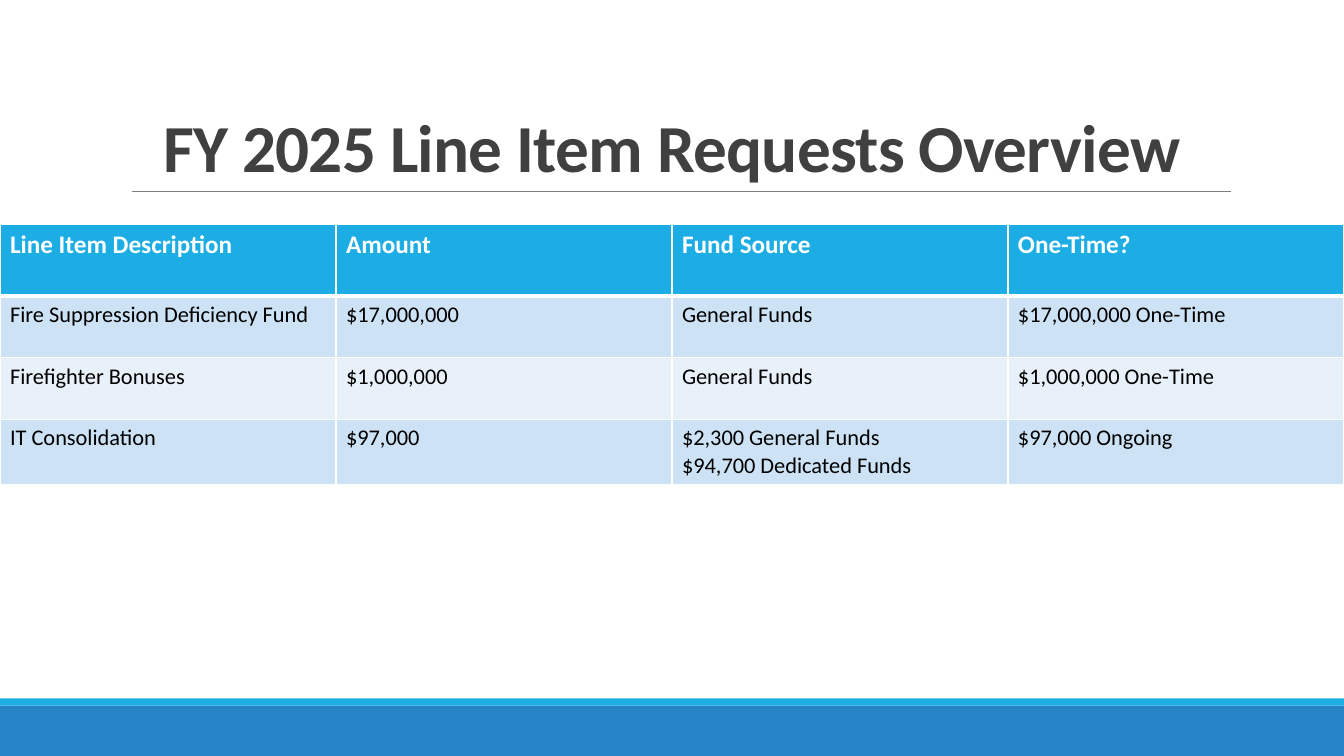
import dataclasses
import typing

import lxml.etree
import pptx
import pptx.dml.color
import pptx.enum.shapes
import pptx.enum.text
import pptx.oxml
import pptx.oxml.ns
import pptx.util

Pt = pptx.util.Pt
RGB = pptx.dml.color.RGBColor
qn = pptx.oxml.ns.qn

WIDE, HIGH = 960, 540
WHITE = RGB(0xFF, 0xFF, 0xFF)
BLACK = RGB(0x00, 0x00, 0x00)
DARK = RGB(0x40, 0x40, 0x40)
GREY = RGB(0x80, 0x80, 0x80)
BLUE = RGB(0x26, 0x83, 0xC6)
CYAN = RGB(0x1C, 0xAD, 0xE4)
PALE = RGB(0xCD, 0xE3, 0xF5)
LIGHT = RGB(0xE8, 0xF1, 0xFA)

HEAD_FONT = {"name": "Calibri", "size": Pt(18), "bold": True}
BODY_FONT = {"name": "Calibri", "size": Pt(16), "bold": False}
TITLE_FONT = {"name": "Calibri", "size": Pt(48), "bold": True}


@dataclasses.dataclass
class Band:
    top: float
    height: float
    color: RGB


@dataclasses.dataclass
class Row:
    height: float
    texts: tuple[str, ...]


BANDS = [Band(504, 36, BLUE), Band(498.8, 5.2, CYAN)]
ROWS = [
    Row(51, ("Line Item Description", "Amount", "Fund Source", "One-Time?")),
    Row(44, ("Fire Suppression Deficiency Fund", "$17,000,000",
             "General Funds", "$17,000,000 One-Time")),
    Row(44, ("Firefighter Bonuses", "$1,000,000",
             "General Funds", "$1,000,000 One-Time")),
    Row(46.5, ("IT Consolidation", "$97,000",
               "$2,300 General Funds\n$94,700 Dedicated Funds",
               "$97,000 Ongoing")),
]


def set_all(item: typing.Any, values: dict[str, typing.Any]) -> None:
    for name, value in values.items():
        setattr(item, name, value)


def draw_band(slide: typing.Any, band: Band) -> None:
    shape = slide.shapes.add_shape(
        pptx.enum.shapes.MSO_SHAPE.RECTANGLE,
        0, Pt(band.top), Pt(WIDE), Pt(band.height))
    shape.shadow.inherit = False
    shape.fill.solid()
    shape.fill.fore_color.rgb = band.color
    shape.line.fill.background()


def draw_rule(slide: typing.Any) -> None:
    rule = slide.shapes.add_connector(
        pptx.enum.shapes.MSO_CONNECTOR.STRAIGHT,
        Pt(94.3), Pt(136.8), Pt(879), Pt(136.8))
    rule.line.color.rgb = GREY
    rule.line.width = Pt(0.5)
    props = rule.element.find(qn("p:spPr"))
    lxml.etree.SubElement(props, qn("a:effectLst"))


def draw_title(slide: typing.Any, text: str) -> None:
    title = slide.shapes.title
    set_all(title, {"left": 0, "top": Pt(22.3),
                    "width": Pt(WIDE), "height": Pt(114.5)})
    frame = title.text_frame
    frame.text = text
    set_all(frame, {"word_wrap": True,
                    "auto_size": pptx.enum.text.MSO_AUTO_SIZE.NONE,
                    "vertical_anchor": pptx.enum.text.MSO_ANCHOR.BOTTOM})
    para = frame.paragraphs[0]
    set_all(para, {"alignment": pptx.enum.text.PP_ALIGN.CENTER,
                   "line_spacing": 0.85})
    run = para.runs[0]
    set_all(run.font, TITLE_FONT)
    run.font.color.rgb = DARK
    run.font._element.set("spc", "-50")


def add_edges(cell: typing.Any, top: float, bottom: float) -> None:
    props = cell._tc.get_or_add_tcPr()
    for side, width in (("L", 1), ("R", 1), ("T", top), ("B", bottom)):
        line = lxml.etree.SubElement(props, qn(f"a:ln{side}"), w=str(Pt(width)))
        fill = lxml.etree.SubElement(line, qn("a:solidFill"))
        lxml.etree.SubElement(fill, qn("a:srgbClr"), val=str(WHITE))


def draw_cell(cell: typing.Any, text: str, index: int) -> None:
    head = index == 0
    # Borders come before the fill in the cell's properties
    add_edges(cell, 3 if index == 1 else 1, 3 if head else 1)
    cell.fill.solid()
    cell.fill.fore_color.rgb = CYAN if head else PALE if index % 2 else LIGHT
    cell.text = text
    for para in cell.text_frame.paragraphs:
        for run in para.runs:
            set_all(run.font, HEAD_FONT if head else BODY_FONT)
            run.font.color.rgb = WHITE if head else BLACK


def draw_table(slide: typing.Any, rows: list[Row]) -> None:
    count = len(rows[0].texts)
    height = sum(row.height for row in rows)
    table = slide.shapes.add_table(
        len(rows), count, 0, Pt(160.5), Pt(WIDE), Pt(height)).table
    for col in table.columns:
        col.width = Pt(WIDE / count)
    for index, row in enumerate(rows):
        table.rows[index].height = Pt(row.height)
        for col, text in enumerate(row.texts):
            draw_cell(table.cell(index, col), text, index)


def main() -> None:
    deck = pptx.Presentation()
    set_all(deck, {"slide_width": Pt(WIDE), "slide_height": Pt(HIGH)})
    slide = deck.slides.add_slide(deck.slide_layouts.get_by_name("Title Only"))

    # Footer bands and title rule
    for band in BANDS:
        draw_band(slide, band)
    draw_rule(slide)

    # Title and requests
    draw_title(slide, "FY 2025 Line Item Requests Overview")
    draw_table(slide, ROWS)

    deck.save("out.pptx")


if __name__ == "__main__":
    main()
